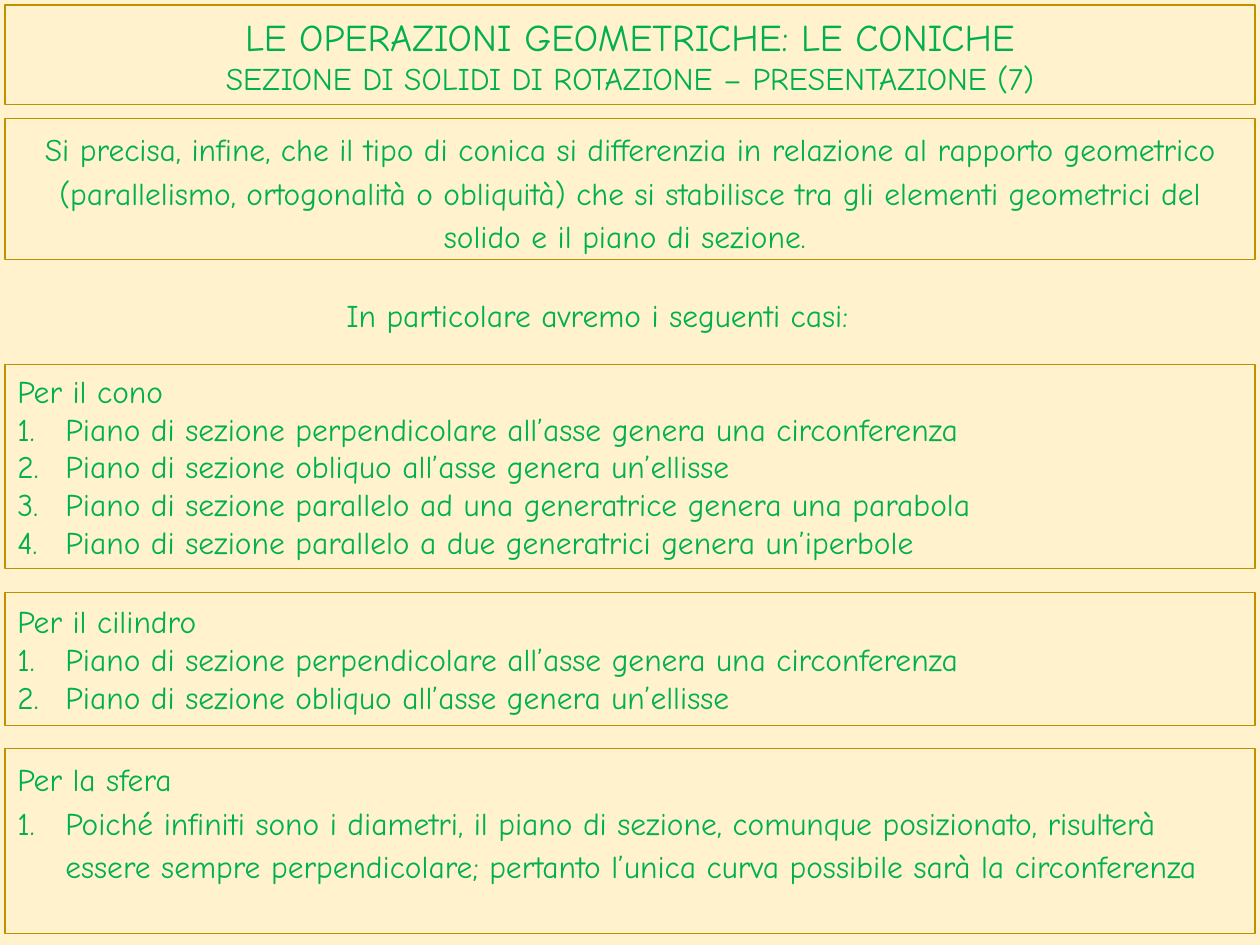
import pptx
import pptx.util
import pptx.dml.color
import pptx.enum.shapes
import pptx.enum.text
import pptx.oxml.ns
import lxml.etree

Inches, Pt = pptx.util.Inches, pptx.util.Pt
ALIGN = pptx.enum.text.PP_ALIGN
ANCHOR = pptx.enum.text.MSO_ANCHOR
COLORS = {"back": "FFF2CC", "edge": "BF9000", "text": "00B050"}
LEFT, WIDTH, INDENT = 0.04, 9.92, 0.38


def color(name):
    return pptx.dml.color.RGBColor.from_string(COLORS[name])


def assign(target, values):
    for key, value in values.items():
        setattr(target, key, value)


class Deck:
    font = "Comic Neue"
    size = 18

    def __init__(self):
        self.prs = pptx.Presentation()
        assign(self.prs, {"slide_width": Inches(10), "slide_height": Inches(7.5)})
        self.slide = self.prs.slides.add_slide(self.prs.slide_layouts[5])
        fill = self.slide.background.fill
        fill.solid()
        fill.fore_color.rgb = color("back")

    def run(self, para, text, size=None):
        run = para.add_run()
        run.text = text
        assign(run.font, {"name": self.font, "size": Pt(size or self.size)})
        run.font.color.rgb = color("text")

    def frame(self, shape, anchor):
        assign(shape.text_frame, {
            "word_wrap": True, "vertical_anchor": anchor,
            "auto_size": pptx.enum.text.MSO_AUTO_SIZE.NONE})
        return shape.text_frame

    def border(self, shape):
        shape.fill.background()
        shape.line.color.rgb = color("edge")
        shape.line.width = Pt(0.75)

    def title(self, top, height, head, sub):
        shape = self.slide.shapes.title
        assign(shape, {"left": Inches(LEFT), "top": Inches(top),
                       "width": Inches(WIDTH), "height": Inches(height)})
        self.border(shape)
        para = self.frame(shape, ANCHOR.MIDDLE).paragraphs[0]
        para.alignment = ALIGN.CENTER
        self.run(para, head, 21.6)
        para.add_line_break()
        self.run(para, sub)

    def number(self, para):
        props = para._p.get_or_add_pPr()
        props.set("marL", str(Inches(INDENT)))
        props.set("indent", str(-Inches(INDENT)))
        mark = lxml.etree.SubElement(props, pptx.oxml.ns.qn("a:buAutoNum"))
        mark.set("type", "arabicPeriod")

    def fill_text(self, shape, lines, anchor, spacing, align=ALIGN.LEFT):
        frame = self.frame(shape, anchor)
        for i, line in enumerate(lines):
            para = frame.add_paragraph() if i else frame.paragraphs[0]
            if i:
                self.number(para)
            assign(para, {"alignment": align, "line_spacing": spacing})
            self.run(para, line)
        para.space_after = Pt(10)

    def box(self, top, height, lines, anchor=ANCHOR.MIDDLE, spacing=1.0, align=ALIGN.LEFT):
        shape = self.slide.shapes.add_shape(
            pptx.enum.shapes.MSO_SHAPE.RECTANGLE,
            Inches(LEFT), Inches(top), Inches(WIDTH), Inches(height))
        shape.shadow.inherit = False
        self.border(shape)
        self.fill_text(shape, lines, anchor, spacing, align)

    def label(self, left, top, width, height, text):
        shape = self.slide.shapes.add_textbox(
            Inches(left), Inches(top), Inches(width), Inches(height))
        self.fill_text(shape, [text], ANCHOR.MIDDLE, 1.15)


def main():
    deck = Deck()

    # Heading and introduction
    deck.title(0.04, 0.79, "LE OPERAZIONI GEOMETRICHE: LE CONICHE",
               "SEZIONE DI SOLIDI DI ROTAZIONE – PRESENTAZIONE (7)")
    deck.box(0.94, 1.12, [
        "Si precisa, infine, che il tipo di conica si differenzia in relazione al "
        "rapporto geometrico (parallelismo, ortogonalità o obliquità) che si stabilisce "
        "tra gli elementi geometrici del solido e il piano di sezione. "],
        ANCHOR.TOP, 1.15, ALIGN.CENTER)
    deck.label(2.65, 2.26, 4.7, 0.43, "In particolare avremo i seguenti casi:")

    # Cases for each solid
    shared = ["Piano di sezione perpendicolare all’asse genera una circonferenza",
              "Piano di sezione obliquo all’asse genera un’ellisse"]
    deck.box(2.89, 1.62, [
        "Per il cono", *shared,
        "Piano di sezione parallelo ad una generatrice genera una parabola",
        "Piano di sezione parallelo a due generatrici genera un’iperbole"])
    deck.box(4.7, 1.06, ["Per il cilindro", *shared])
    deck.box(5.94, 1.47, [
        "Per la sfera",
        "Poiché infiniti sono i diametri, il piano di sezione, comunque posizionato, "
        "risulterà essere sempre perpendicolare; pertanto l’unica curva possibile "
        "sarà la circonferenza"], ANCHOR.TOP, 1.15)

    deck.prs.save("out.pptx")


if __name__ == "__main__":
    main()
